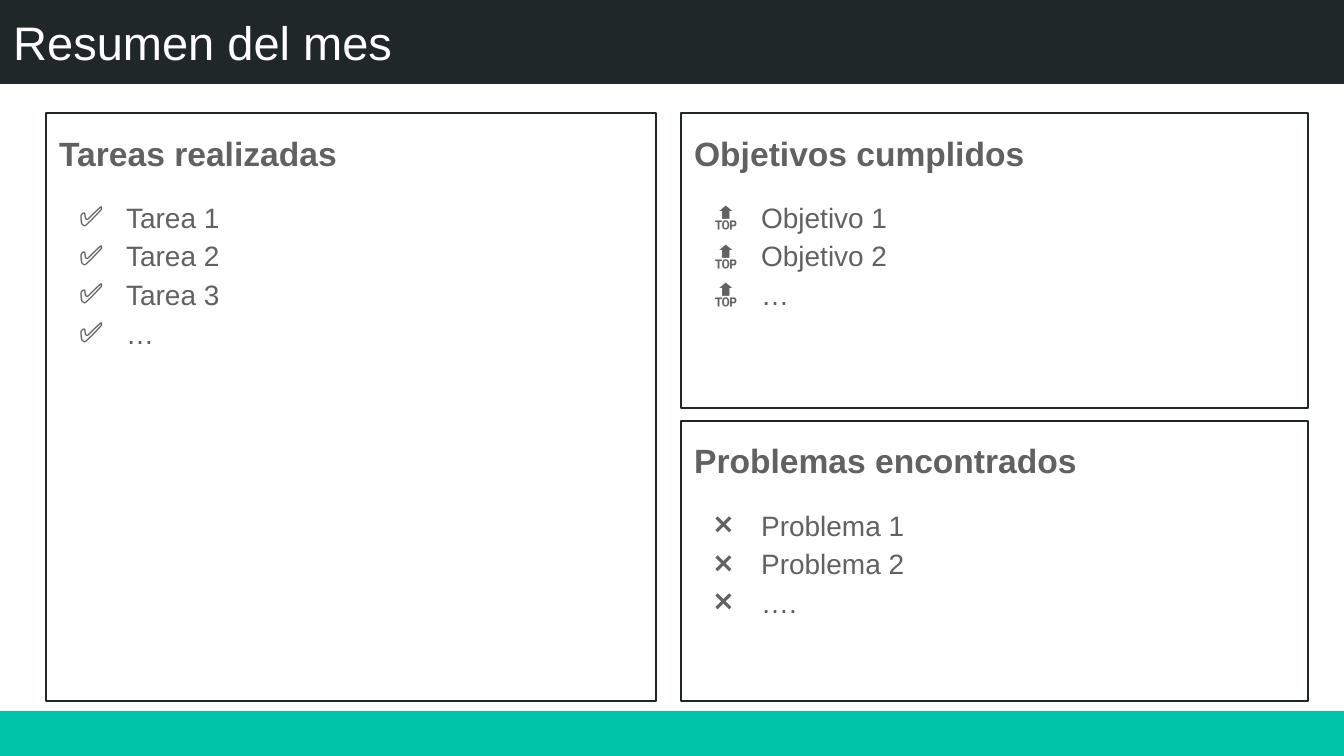
import pptx
import pptx.dml.color
import pptx.enum.shapes
import pptx.enum.text
import pptx.oxml.ns
import pptx.util
from lxml import etree

# Content
TITLE = "Resumen del mes"
# heading, bullet, items, (left, top, width, height) in px
PANELS = [
    ("Tareas realizadas", "✅", ["Tarea 1", "Tarea 2", "Tarea 3", "…"],
     (46, 113, 610, 588)),
    ("Objetivos cumplidos", "🔝", ["Objetivo 1", "Objetivo 2", "…"],
     (681, 113, 627, 295)),
    ("Problemas encontrados", "❌", ["Problema 1", "Problema 2", "…."],
     (681, 421, 627, 280)),
]

# Style
FONT = "Arial"
DARK, TEAL, GRAY, WHITE = "202729", "00C4A7", "616161", "FFFFFF"
WIDTH, HEIGHT = 1344, 756
TITLE_HEIGHT, FOOTER_TOP = 84, 711
INDENT, HANGING = 67, 47
EMU_PER_PX = 914400 / 134.4


def px(value):
    return pptx.util.Emu(round(value * EMU_PER_PX))


def color(hex_value):
    return pptx.dml.color.RGBColor.from_string(hex_value)


def add_box(slide, box, fill=None, line=None):
    shape = slide.shapes.add_shape(
        pptx.enum.shapes.MSO_SHAPE.RECTANGLE, *map(px, box))
    shape.shadow.inherit = False
    if fill:
        shape.fill.solid()
        shape.fill.fore_color.rgb = color(fill)
    else:
        shape.fill.background()
    if line:
        shape.line.color.rgb = color(line)
        shape.line.width = pptx.util.Pt(0.75)
    else:
        shape.line.fill.background()
    frame = shape.text_frame
    frame.word_wrap = True
    frame.margin_left = frame.margin_right = pptx.util.Inches(0.1)
    frame.margin_top = frame.margin_bottom = pptx.util.Inches(0.1)
    return shape


def format_text(paragraph, size, text_color, bold=False):
    paragraph.alignment = pptx.enum.text.PP_ALIGN.LEFT
    for run in paragraph.runs:
        run.font.name = FONT
        run.font.size = pptx.util.Pt(size)
        run.font.bold = bold
        run.font.color.rgb = color(text_color)


def add_bullet(paragraph, character):
    qn = pptx.oxml.ns.qn
    properties = paragraph._p.get_or_add_pPr()
    properties.set("marL", str(px(INDENT)))
    properties.set("indent", str(-px(HANGING)))
    bullet_color = etree.SubElement(properties, qn("a:buClr"))
    etree.SubElement(bullet_color, qn("a:srgbClr"), val=GRAY)
    etree.SubElement(properties, qn("a:buFont"), typeface=FONT)
    etree.SubElement(properties, qn("a:buChar"), char=character)


def add_panel(slide, heading, bullet, items, box):
    frame = add_box(slide, box, line=DARK).text_frame
    frame.vertical_anchor = pptx.enum.text.MSO_ANCHOR.TOP
    paragraph = frame.paragraphs[0]
    paragraph.text = heading
    paragraph.line_spacing = 1.15
    format_text(paragraph, 18, GRAY, bold=True)
    for index, item in enumerate(items):
        paragraph = frame.add_paragraph()
        paragraph.text = item
        add_bullet(paragraph, bullet)
        paragraph.line_spacing = 1.15
        paragraph.space_before = pptx.util.Pt(12 if index == 0 else 0)
        format_text(paragraph, 15, GRAY)


def main():
    presentation = pptx.Presentation()
    presentation.slide_width = px(WIDTH)
    presentation.slide_height = px(HEIGHT)
    slide = presentation.slides.add_slide(presentation.slide_layouts[6])

    # Footer band
    add_box(slide, (0, FOOTER_TOP, WIDTH, HEIGHT - FOOTER_TOP), fill=TEAL)

    # Title bar
    title = add_box(slide, (0, 0, WIDTH, TITLE_HEIGHT), fill=DARK)
    title.text_frame.text = TITLE
    title.text_frame.vertical_anchor = pptx.enum.text.MSO_ANCHOR.MIDDLE
    format_text(title.text_frame.paragraphs[0], 25.2, WHITE)

    # Panels
    for panel in PANELS:
        add_panel(slide, *panel)

    presentation.save("out.pptx")


if __name__ == "__main__":
    main()
